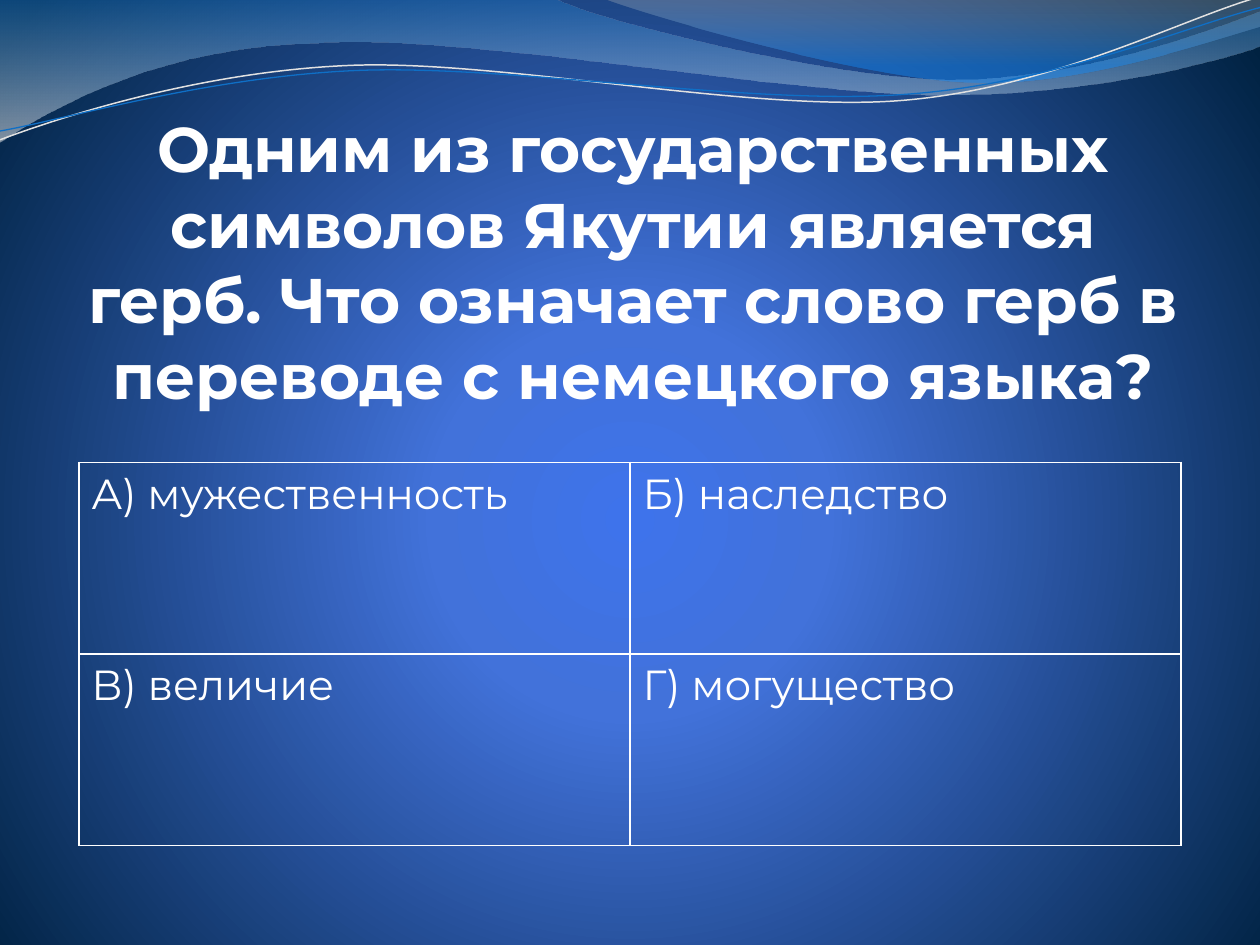
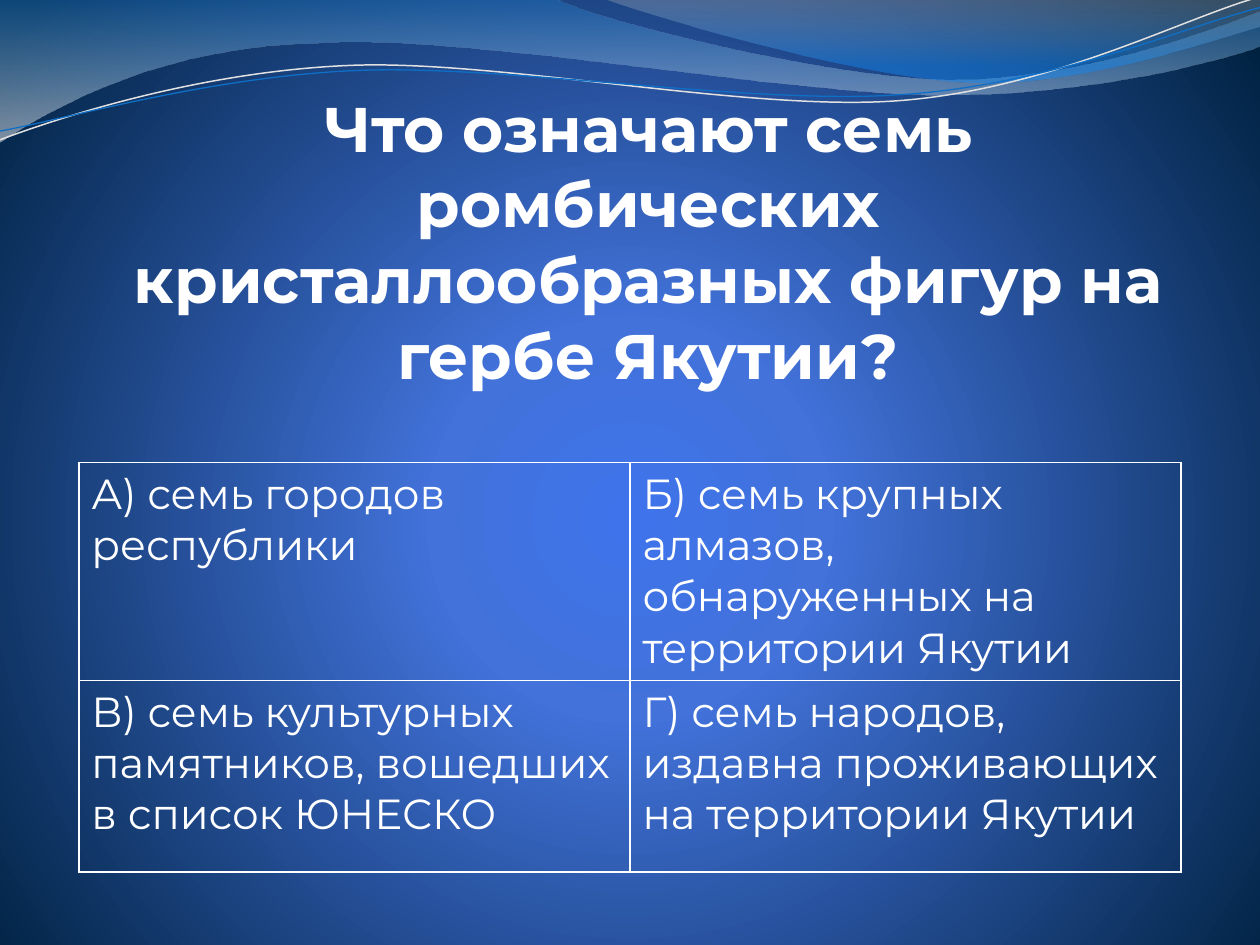
from dataclasses import dataclass

from pptx import Presentation
from pptx.dml.color import RGBColor
from pptx.enum.text import MSO_ANCHOR as Anchor, PP_ALIGN as Align
from pptx.oxml import parse_xml
from pptx.oxml.ns import nsdecls, qn
from pptx.util import Inches, Pt


@dataclass(frozen=True)
class Theme:
    font: str = "Montserrat"
    text: str = "FFFFFF"
    title_size: int = 36
    answer_size: int = 24
    border_width: int = 1
    backdrop: tuple = ((0, "3E73EB", 100), (25, "4272DA", 100), (100, "002241", 100))
    wide_wave: tuple = ((0, "1D73BF", 45), (100, "E7E7E7", 55))
    corner_wave: tuple = ((0, "BDBDBD", 30), (80, "138AF4", 45))
    light_line: str = "E1E1E1"
    blue_line: str = "0F6FC6"


THEME = Theme()
SLIDE_WIDTH = Inches(10)
TABLE_WIDTH = Inches(8.75)
GLOW = '<a:path path="circle"><a:fillToRect l="10000" t="110000" r="10000" b="100000"/></a:path>'
DOWNWARD = '<a:lin ang="5400000" scaled="0"/>'

WIDE_WAVE = [
    (0, 0), (4.4, -0.01),
    (4.76, 0.17, 6.64, 0.63, 7.58, 0.63), (8.53, 0.63, 9.58, 0.26, 10, 0.09),
    (10.01, 0.36),
    (9.83, 0.44, 8.7, 0.76, 7.46, 0.75), (6.22, 0.75, 3.82, 0.28, 2.57, 0.34),
    (1.29, 0.36, 0.46, 0.83, -0.01, 1.13), (0, 0),
]
CORNER_WAVE = [
    (4.79, -0.01),
    (5.09, 0.11, 6.82, 0.62, 7.69, 0.65), (8.56, 0.69, 9.61, 0.32, 10, 0.21),
    (10, 0), (4.79, -0.01),
]
LIGHT_LINE = [
    (0, 1.11),
    (0.48, 0.93, 1.58, 0.57, 2.77, 0.52), (3.95, 0.47, 5.93, 0.89, 7.13, 0.8),
    (8.33, 0.71, 9.38, 0.15, 9.98, -0.02),
]
BLUE_LINE = [
    (0, 1.04),
    (0.47, 0.96, 1.64, 0.61, 2.83, 0.56), (4.03, 0.51, 5.97, 0.84, 7.17, 0.75),
    (8.36, 0.67, 9.41, 0.21, 10, 0.06),
]

QUESTIONS = [
    (
        "Одним из государственных символов Якутии является герб. "
        "Что означает слово герб в переводе с немецкого языка?",
        (0.62, 0.94, 8.83, 2.33),
        (1.52, 1.52),
        [["А) мужественность", "Б) наследство"], ["В) величие", "Г) могущество"]],
    ),
    (
        "Что означают семь ромбических кристаллообразных фигур на гербе Якутии?",
        (0.7, 0.78, 8.91, 2.33),
        (1.73, 1.52),
        [
            ["А) семь городов республики",
             "Б) семь крупных алмазов, обнаруженных на территории Якутии"],
            ["В) семь культурных памятников, вошедших в список ЮНЕСКО",
             "Г) семь народов, издавна проживающих на территории Якутии"],
        ],
    ),
]


def set_values(target, values):
    for name, value in values.items():
        setattr(target, name, value)


def set_gradient(fill, element, stops, direction):
    fill.gradient()
    stop_list = "".join(
        f'<a:gs pos="{position * 1000}"><a:srgbClr val="{color}">'
        f'<a:alpha val="{opacity * 1000}"/></a:srgbClr></a:gs>'
        for position, color, opacity in stops
    )
    gradient = parse_xml(
        f'<a:gradFill {nsdecls("a")} rotWithShape="1">'
        f"<a:gsLst>{stop_list}</a:gsLst>{direction}</a:gradFill>"
    )
    current = element.find(".//" + qn("a:gradFill"))
    current.getparent().replace(current, gradient)


def make_curve(shape, segment):
    points = "".join(
        f'<a:pt x="{Inches(x) - shape.left}" y="{Inches(y) - shape.top}"/>'
        for x, y in zip(segment[::2], segment[1::2])
    )
    return parse_xml(f'<a:cubicBezTo {nsdecls("a")}>{points}</a:cubicBezTo>')


def add_outline(slide, segments, closed):
    anchors = [tuple(map(Inches, segment[-2:])) for segment in segments]
    builder = slide.shapes.build_freeform(*anchors[0])
    builder.add_line_segments(anchors[1:], close=closed)
    shape = builder.convert_to_shape()
    shape.shadow.inherit = False
    lines = list(shape.element.iter(qn("a:lnTo")))
    for line, segment in zip(lines, segments[1:]):
        if len(segment) == 6:
            line.getparent().replace(line, make_curve(shape, segment))
    return shape


def add_wave(slide, segments, stops):
    shape = add_outline(slide, segments, True)
    shape.line.fill.background()
    set_gradient(shape.fill, shape.element, stops, DOWNWARD)
    return shape


def add_wave_line(slide, segments, color, width):
    shape = add_outline(slide, segments, False)
    shape.fill.background()
    shape.line.color.rgb = RGBColor.from_string(color)
    shape.line.width = Pt(width)
    return shape


def decorate_layout(layout, slide):
    for placeholder in list(layout.placeholders):
        layout.shapes.element.remove(placeholder.element)
    set_gradient(layout.background.fill, layout.element, THEME.backdrop, GLOW)
    decorations = [
        add_wave(slide, WIDE_WAVE, THEME.wide_wave),
        add_wave(slide, CORNER_WAVE, THEME.corner_wave),
        add_wave_line(slide, LIGHT_LINE, THEME.light_line, 0.85),
        add_wave_line(slide, BLUE_LINE, THEME.blue_line, 0.75),
    ]
    for shape in decorations:
        layout.shapes.element.append(shape.element)


def write_text(text_frame, text, size, bold, alignment):
    paragraph = text_frame.paragraphs[0]
    paragraph.alignment = alignment
    run = paragraph.add_run()
    run.text = text
    set_values(run.font, {"name": THEME.font, "size": Pt(size), "bold": bold})
    run.font.color.rgb = RGBColor.from_string(THEME.text)


def add_title(slide, text, box):
    text_frame = slide.shapes.add_textbox(*map(Inches, box)).text_frame
    set_values(text_frame, {
        "word_wrap": True,
        "vertical_anchor": Anchor.BOTTOM,
        "margin_left": 0,
        "margin_top": 0,
        "margin_right": Inches(0.02),
        "margin_bottom": 0,
    })
    write_text(text_frame, text, THEME.title_size, True, Align.CENTER)


def add_borders(cell):
    properties = cell._tc.get_or_add_tcPr()
    for index, side in enumerate(("lnL", "lnR", "lnT", "lnB")):
        properties.insert(index, parse_xml(
            f'<a:{side} {nsdecls("a")} w="{Pt(THEME.border_width)}"><a:solidFill>'
            f'<a:srgbClr val="{THEME.text}"/></a:solidFill></a:{side}>'
        ))


def add_answers(slide, answers, row_heights):
    left = (SLIDE_WIDTH - TABLE_WIDTH) // 2
    table = slide.shapes.add_table(
        len(answers), len(answers[0]), left, Inches(3.67),
        TABLE_WIDTH, Inches(sum(row_heights)),
    ).table
    set_values(table, {"first_row": False, "horz_banding": False})
    for row_index, (row, height) in enumerate(zip(answers, row_heights)):
        table.rows[row_index].height = Inches(height)
        for column_index, answer in enumerate(row):
            cell = table.cell(row_index, column_index)
            cell.fill.background()
            add_borders(cell)
            write_text(cell.text_frame, answer, THEME.answer_size, False, Align.LEFT)


def main():
    presentation = Presentation()
    set_values(presentation, {"slide_width": SLIDE_WIDTH, "slide_height": Inches(7.5)})
    layout = presentation.slide_layouts[6]
    slides = [presentation.slides.add_slide(layout) for _ in QUESTIONS]
    decorate_layout(layout, slides[0])
    for slide, (title, title_box, row_heights, answers) in zip(slides, QUESTIONS):
        add_title(slide, title, title_box)
        add_answers(slide, answers, row_heights)
    presentation.save("out.pptx")


if __name__ == "__main__":
    main()
